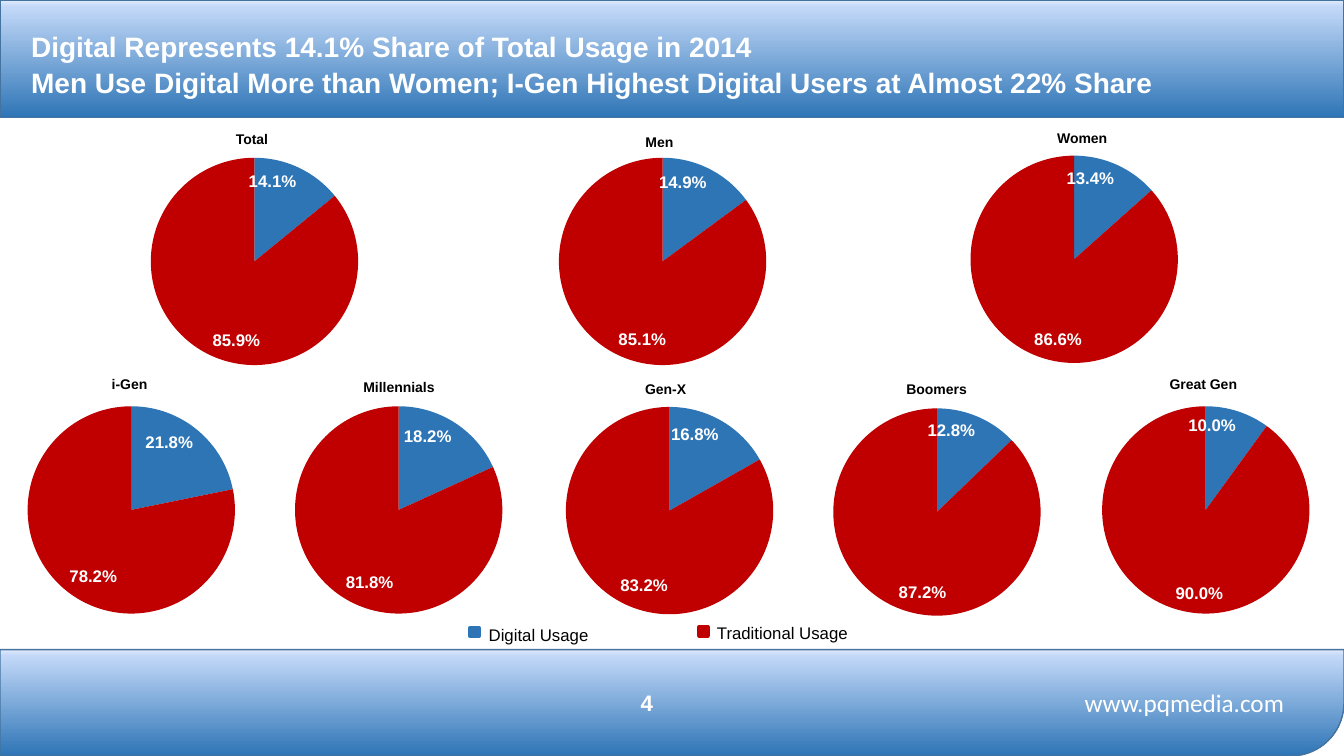
"""Build the slide comparing digital and traditional usage shares."""
import lxml.etree
import pptx
import pptx.chart.data
import pptx.dml.color
import pptx.enum.chart
import pptx.enum.shapes
import pptx.enum.text
import pptx.oxml
import pptx.util

Pt = pptx.util.Pt
ALIGN = pptx.enum.text.PP_ALIGN
ANCHOR = pptx.enum.text.MSO_ANCHOR
SHAPE = pptx.enum.shapes.MSO_SHAPE
CHART = pptx.enum.chart

COLOURS = {
    "digital": "2E75B6",
    "traditional": "C00000",
    "band_light": "C2D8F8",
    "band_edge": "E1EBFB",
    "band_line": "43739E",
    "white": "FFFFFF",
    "black": "000000",
}
WIDTH, HEIGHT = 960, 540
PIE_WIDTH, PIE_HEIGHT = 242, 155
PLOT = {"x": 0.192, "y": 0.011, "w": 0.631, "h": 0.956}

PIES = [
    ("Total", 0.141, (59, 111), (160.5, 90, 39)),
    ("Men", 0.149, (350.5, 111), (453.5, 92, 35)),
    ("Women", 0.134, (644.5, 109.5), (747.5, 89, 51)),
    ("i-Gen", 0.218, (-29, 288.5), (72.5, 265, 40)),
    ("Millennials", 0.182, (162, 288.5), (252, 267, 66)),
    ("Gen-X", 0.168, (355.5, 289), (453.5, 268, 44)),
    ("Boomers", 0.128, (546.5, 290), (640, 268, 58)),
    ("Great Gen", 0.1, (738.5, 288.5), (828, 265, 63)),
]
LEGEND = [
    ("Digital Usage", "digital", (336, 448.5), (342, 442.5, 86)),
    ("Traditional Usage", "traditional", (499.5, 448), (505, 441.5, 109)),
]


class SlideBuilder:
    """Hold the style and current slide, and draw each kind of element."""

    def __init__(self, presentation):
        self.slide = presentation.slides.add_slide(presentation.slide_layouts[5])
        self.shapes = self.slide.shapes

    def colour(self, name):
        """Return a named colour."""
        return pptx.dml.color.RGBColor.from_string(COLOURS[name])

    def style(self, font, size, colour="black", bold=False, name="Arial"):
        """Format a font."""
        font.name, font.size, font.bold = name, Pt(size), bold
        font.color.rgb = self.colour(colour)

    def band(self, top, height, rounding):
        """Draw a full-width gradient band with a lower right corner."""
        shape = self.shapes.add_shape(
            SHAPE.ROUND_1_RECTANGLE, 0, Pt(top), Pt(WIDTH), Pt(height))
        shape.shadow.inherit = False
        shape.adjustments[0] = rounding
        shape._element.spPr.xfrm.set("flipV", "1")
        shape.fill.gradient()
        shape.fill.gradient_angle = 270
        stops = shape._element.spPr.find(".//" + pptx.oxml.ns.qn("a:gsLst"))
        for stop in list(stops):
            stops.remove(stop)
        for position, name in ((0, "digital"), (94, "band_light"), (100, "band_edge")):
            stop = lxml.etree.SubElement(
                stops, pptx.oxml.ns.qn("a:gs"), pos=str(position * 1000))
            lxml.etree.SubElement(
                stop, pptx.oxml.ns.qn("a:srgbClr"), val=COLOURS[name])
        shape.line.color.rgb = self.colour("band_line")
        shape.line.width = Pt(1)

    def title(self, lines, left, top, width, height):
        """Place the title in front of the band."""
        shape = self.shapes.title
        self.shapes._spTree.append(shape._element)
        shape.left, shape.top = Pt(left), Pt(top)
        shape.width, shape.height = Pt(width), Pt(height)
        frame = shape.text_frame
        frame.text = "\n".join(lines)
        frame.word_wrap = True
        frame.auto_size = pptx.enum.text.MSO_AUTO_SIZE.NONE
        frame.vertical_anchor = ANCHOR.TOP
        for paragraph in frame.paragraphs:
            paragraph.alignment = ALIGN.LEFT
            paragraph.line_spacing = 1.07
            paragraph.space_before = Pt(0)
            self.style(paragraph.font, 20, "white", True)

    def text(self, text, left, top, width, height, size, align=ALIGN.CENTER,
             wrap=False, anchor=ANCHOR.TOP, **style):
        """Place one line of text."""
        shape = self.shapes.add_textbox(Pt(left), Pt(top), Pt(width), Pt(height))
        frame = shape.text_frame
        frame.word_wrap = wrap
        frame.vertical_anchor = anchor
        paragraph = frame.paragraphs[0]
        paragraph.text = text
        paragraph.alignment = align
        self.style(paragraph.font, size, **style)

    def swatch(self, left, top, colour):
        """Draw a legend key."""
        shape = self.shapes.add_shape(
            SHAPE.RECTANGLE, Pt(left), Pt(top), Pt(6), Pt(6))
        shape.shadow.inherit = False
        shape.fill.solid()
        shape.fill.fore_color.rgb = self.colour(colour)
        shape.line.color.rgb = self.colour(colour)
        shape.line.width = Pt(3)

    def pie(self, share, left, top):
        """Draw a pie of the digital share and the rest."""
        data = pptx.chart.data.CategoryChartData(number_format="0.0%")
        data.categories = ["1", "2"]
        data.add_series("Series 1", (share, round(1 - share, 3)))
        chart = self.shapes.add_chart(
            CHART.XL_CHART_TYPE.PIE, Pt(left), Pt(top),
            Pt(PIE_WIDTH), Pt(PIE_HEIGHT), data).chart
        chart.has_title = chart.has_legend = False
        self.style(chart.font, 10, name="Calibri")
        plot = chart.plots[0]
        plot.vary_by_categories = True
        for index, name in enumerate(("digital", "traditional")):
            point = plot.series[0].points[index]
            point.format.fill.solid()
            point.format.fill.fore_color.rgb = self.colour(name)
            point.format.line.fill.background()
        plot.has_data_labels = True
        labels = plot.data_labels
        labels.show_value, labels.show_percentage = True, False
        labels.number_format, labels.number_format_is_linked = "0.0%", False
        labels.position = CHART.XL_LABEL_POSITION.INSIDE_END
        self.style(labels.font, 12, "white", True)
        self.plot_layout(chart)

    def plot_layout(self, chart):
        """Fix the inner plot area of a chart."""
        qualified = pptx.oxml.ns.qn
        area = chart._chartSpace.find(".//" + qualified("c:plotArea"))
        for layout in area.findall(qualified("c:layout")):
            area.remove(layout)
        layout = lxml.etree.Element(qualified("c:layout"))
        area.insert(0, layout)
        manual = lxml.etree.SubElement(layout, qualified("c:manualLayout"))
        settings = {"layoutTarget": "inner", "xMode": "edge", "yMode": "edge", **PLOT}
        for tag, value in settings.items():
            lxml.etree.SubElement(manual, qualified("c:" + tag), val=str(value))


def main():
    """Build and save the presentation."""
    presentation = pptx.Presentation()
    presentation.slide_width, presentation.slide_height = Pt(WIDTH), Pt(HEIGHT)
    builder = SlideBuilder(presentation)
    builder.band(464, 76, 0.5)
    builder.band(0, 84, 0)
    builder.text("4", 378, 487, 168, 29, 16, wrap=True, anchor=ANCHOR.MIDDLE,
                 colour="white", bold=True)
    builder.text("www.pqmedia.com", 732, 487, 228, 29, 18, wrap=True,
                 anchor=ANCHOR.MIDDLE, colour="white", name="Calibri")
    builder.title(
        ["Digital Represents 14.1% Share of Total Usage in 2014",
         "Men Use Digital More than Women; I-Gen Highest Digital Users at Almost 22% Share"],
        15, 16, 937, 48)
    for label, colour, key, (left, top, width) in LEGEND:
        builder.swatch(*key, colour)
        builder.text(label, left, top, width, 22, 12, ALIGN.LEFT)
    for label, share, place, (left, top, width) in PIES:
        builder.pie(share, *place)
        builder.text(label, left, top, width, 19.5, 10, bold=True)
    presentation.save("out.pptx")


if __name__ == "__main__":
    main()
